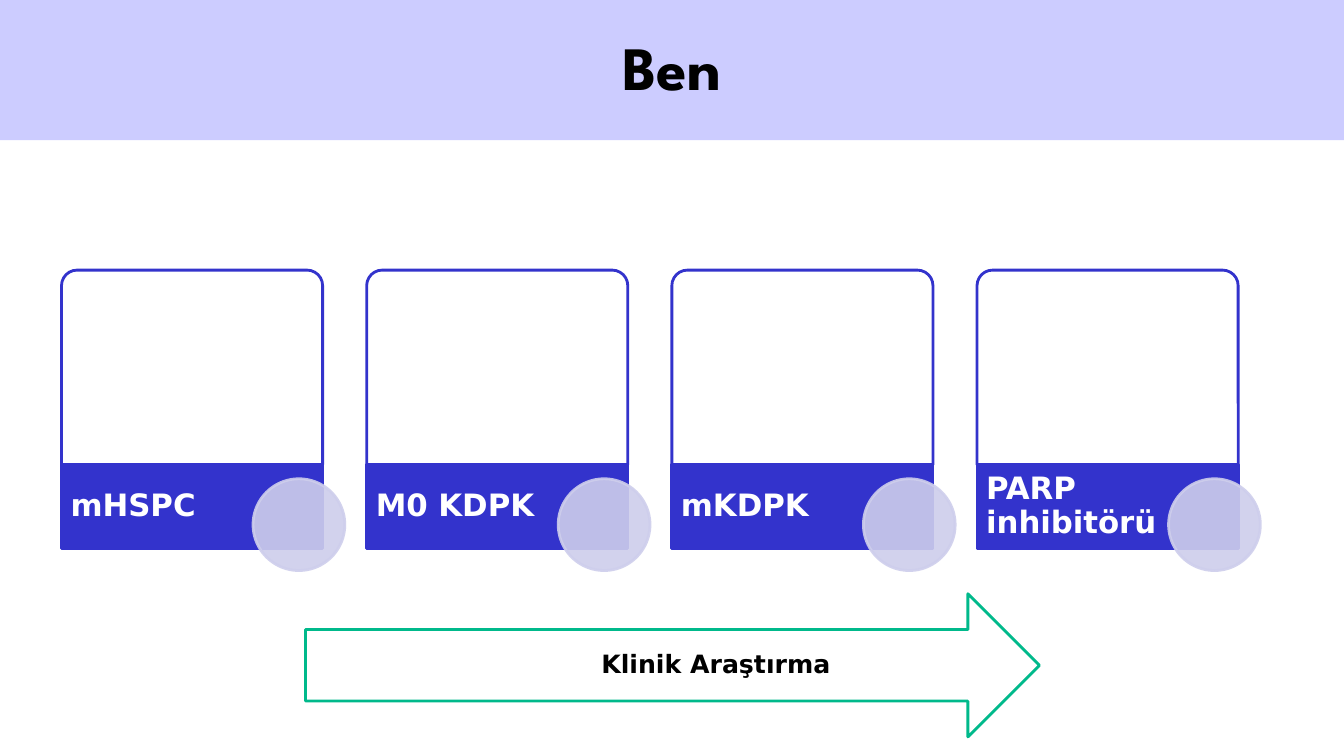
from dataclasses import dataclass

from lxml.etree import SubElement
from pptx import Presentation
from pptx.dml.color import RGBColor
from pptx.enum.shapes import MSO_SHAPE
from pptx.enum.text import MSO_ANCHOR, PP_ALIGN
from pptx.oxml.ns import qn
from pptx.util import Inches, Pt


@dataclass(frozen=True)
class Theme:
    band: str = "CCCCFF"
    card: str = "3333CC"
    badge: str = "CECEEC"
    arrow: str = "00B98B"
    light: str = "FFFFFF"
    dark: str = "000000"
    title_font: str = "League Spartan"
    body_font: str = "DejaVu Sans"
    title_size: int = 44
    label_size: int = 22
    arrow_size: int = 18
    line_width: int = 2


THEME = Theme()
SLIDE_WIDTH, SLIDE_HEIGHT = 13.33, 7.5
STAGES = ["mHSPC", "M0 KDPK", "mKDPK", "PARP inhibitörü"]


def set_opacity(fill, percent):
    for color in fill._xPr.iter(qn("a:srgbClr")):
        SubElement(color, qn("a:alpha")).set("val", str(percent * 1000))


def add_outlined(shapes, preset, box, fill, line, opacity=100):
    shape = shapes.add_shape(preset, *map(Inches, box))
    shape.shadow.inherit = False
    shape.fill.solid()
    shape.fill.fore_color.rgb = RGBColor.from_string(fill)
    if opacity < 100:
        set_opacity(shape.fill, opacity)
    shape.line.color.rgb = RGBColor.from_string(line)
    shape.line.width = Pt(THEME.line_width)
    return shape


def write_text(shape, text, font, size, color, align, insets):
    """Fill a shape with one bold line; insets are left, top, right, bottom."""
    frame = shape.text_frame
    frame.text = text
    frame.word_wrap = True
    frame.vertical_anchor = MSO_ANCHOR.MIDDLE
    (frame.margin_left, frame.margin_top,
     frame.margin_right, frame.margin_bottom) = map(Inches, insets)
    paragraph = frame.paragraphs[0]
    paragraph.alignment = align
    paragraph.line_spacing = 0.9
    run_font = paragraph.runs[0].font
    run_font.name = font
    run_font.size = Pt(size)
    run_font.bold = True
    run_font.color.rgb = RGBColor.from_string(color)


def add_title_band(slide, text, box):
    title = slide.shapes.title
    title.left, title.top, title.width, title.height = map(Inches, box)
    title.fill.solid()
    title.fill.fore_color.rgb = RGBColor.from_string(THEME.band)
    write_text(title, text, THEME.title_font, THEME.title_size, THEME.dark,
               PP_ALIGN.CENTER, (0.1, 0.05, 0.1, 0.05))


def add_stage_card(shapes, stage, box):
    """Place a rounded panel over a label bar, with a badge at its lower right."""
    left, top, width, height = box
    bar_height, badge_size, overhang = 0.83, 0.91, 0.22
    panel_height = height - bar_height
    bar_top = top + panel_height
    panel = add_outlined(shapes, MSO_SHAPE.ROUND_2_SAME_RECTANGLE,
                         (left, top, width, panel_height),
                         THEME.light, THEME.card, opacity=90)
    panel.adjustments[0] = 0.08
    add_outlined(shapes, MSO_SHAPE.RECTANGLE, (left, bar_top, width, bar_height),
                 THEME.card, THEME.card)
    label = shapes.add_textbox(*map(Inches, (left, bar_top, 0.704 * width, bar_height)))
    write_text(label, stage, THEME.body_font, THEME.label_size, THEME.light,
               PP_ALIGN.LEFT, (0.09, 0, 0.03, 0))
    badge_box = (left + width + overhang - badge_size,
                 top + height + overhang - badge_size, badge_size, badge_size)
    badge = add_outlined(shapes, MSO_SHAPE.OVAL, badge_box,
                         THEME.badge, THEME.badge, opacity=90)
    set_opacity(badge.line.fill, 90)


def add_stage_row(slide, stages, box):
    """Spread the cards evenly from the left to the right edge of the box."""
    left, top, width, height = box
    card_width = 2.59
    pitch = (width - card_width) / (len(stages) - 1)
    for index, stage in enumerate(stages):
        group = slide.shapes.add_group_shape()
        add_stage_card(group.shapes, stage,
                       (left + index * pitch, top, card_width, height))


def add_research_arrow(slide, text, box):
    left, top, width, height = box
    shapes = slide.shapes.add_group_shape().shapes
    add_outlined(shapes, MSO_SHAPE.RIGHT_ARROW, box, THEME.light, THEME.arrow)
    caption_box = (left + 0.91, top + height / 4, width - 0.96, height / 2)
    caption = shapes.add_textbox(*map(Inches, caption_box))
    write_text(caption, text, THEME.body_font, THEME.arrow_size, THEME.dark,
               PP_ALIGN.CENTER, (0, 0.2, 0, 0.2))


def main():
    presentation = Presentation()
    presentation.slide_width = Inches(SLIDE_WIDTH)
    presentation.slide_height = Inches(SLIDE_HEIGHT)
    title_only = presentation.slide_layouts[5]
    slide = presentation.slides.add_slide(title_only)
    add_title_band(slide, "Ben", (0, 0, SLIDE_WIDTH, 1.39))
    add_stage_row(slide, STAGES, (0.61, 2.68, 11.67, 2.76))
    add_research_arrow(slide, "Klinik Araştırma", (3.03, 5.89, 7.28, 1.42))
    presentation.save("out.pptx")


if __name__ == "__main__":
    main()
